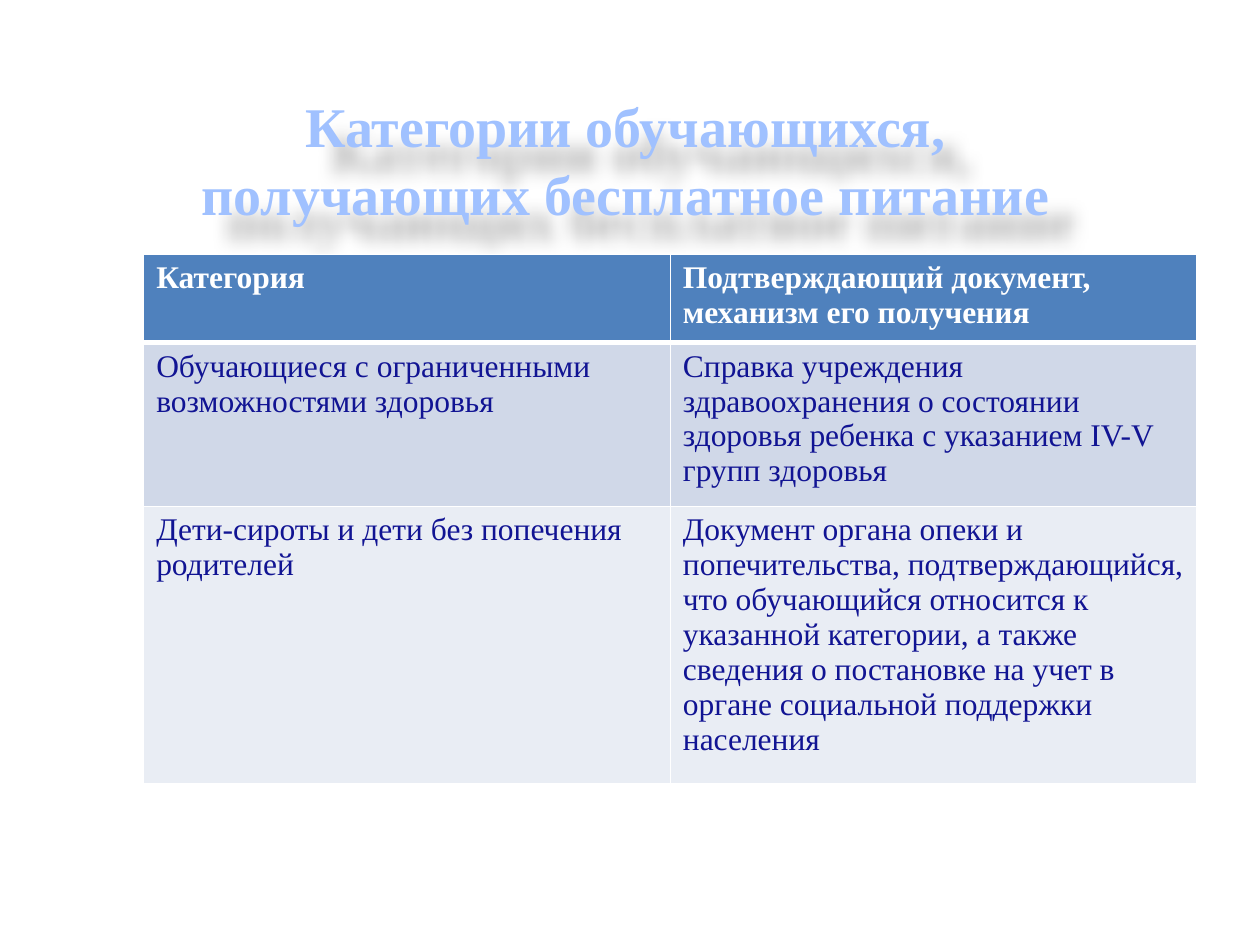
"""Build a slide with a table of pupils entitled to free meals."""
from lxml import etree
from pptx import Presentation
from pptx.dml.color import RGBColor
from pptx.enum.text import MSO_ANCHOR, MSO_AUTO_SIZE, PP_ALIGN
from pptx.oxml import parse_xml
from pptx.oxml.ns import nsdecls, qn
from pptx.util import Inches, Pt

CENTER = PP_ALIGN.CENTER
TOP = MSO_ANCHOR.TOP
NO_FIT = MSO_AUTO_SIZE.NONE
FONT = "Times New Roman"
COLORS = {
    "title": "A0C1FF", "shade": "000000", "head": "4F81BD", "white": "FFFFFF",
    "text": "111493", "band": "D0D8E8", "pale": "E9EDF4",
}


def add_run(para, text, size, color, bold):
    run = para.add_run()
    run.text = text
    run.font.name = FONT
    run.font.size = Pt(size)
    run.font.bold = bold
    run.font.color.rgb = RGBColor.from_string(COLORS[color])


def add_edge(cell, side, width):
    props = cell._tc.get_or_add_tcPr()
    edge = etree.SubElement(props, qn("a:" + side), w=str(Pt(width)))
    fill = etree.SubElement(edge, qn("a:solidFill"))
    etree.SubElement(fill, qn("a:srgbClr"), val=COLORS["white"])


prs = Presentation()
prs.slide_width, prs.slide_height = Inches(10), Inches(7.5)
slide = prs.slides.add_slide(prs.slide_layouts[5])

title = slide.shapes.title
title.left, title.top = Inches(1.46), Inches(0.68)
title.width, title.height = Inches(7.01), Inches(1.18)
frame = title.text_frame
frame.word_wrap = False
frame.auto_size = NO_FIT
frame.vertical_anchor = TOP
for i, line in enumerate(["Категории обучающихся,", "получающих бесплатное питание"]):
    para = frame.add_paragraph() if i else frame.paragraphs[0]
    para.alignment = CENTER
    add_run(para, line, 32, "title", True)
title._element.spPr.append(parse_xml(
    f'<a:effectLst {nsdecls("a")}>'
    f'<a:outerShdw blurRad="{Inches(0.14)}" dist="{Inches(0.27)}" dir="2700000" algn="tl">'
    f'<a:srgbClr val="{COLORS["shade"]}"><a:alpha val="30000"/></a:srgbClr>'
    '</a:outerShdw></a:effectLst>'))

rows = [
    (0.7, "head", "white", ["Категория", "Подтверждающий документ, механизм его получения"]),
    (1.3, "band", "text", [
        "Обучающиеся с ограниченными возможностями здоровья",
        "Справка учреждения здравоохранения о состоянии здоровья ребенка "
        "с указанием IV-V групп здоровья"]),
    (2.2, "pale", "text", [
        "Дети-сироты и дети без попечения родителей",
        "Документ органа опеки и попечительства, подтверждающийся, что обучающийся "
        "относится к указанной категории, а также сведения о постановке на учет "
        "в органе социальной поддержки населения"]),
]
table = slide.shapes.add_table(
    3, 2, Inches(1.14), Inches(2.02), Inches(8.36), Inches(4.2)).table
for col in table.columns:
    col.width = Inches(4.18)
for r, (height, fill, color, texts) in enumerate(rows):
    table.rows[r].height = Inches(height)
    for c, text in enumerate(texts):
        cell = table.cell(r, c)
        for side in ("lnL", "lnR", "lnT", "lnB"):
            thick = (r, side) in ((0, "lnB"), (1, "lnT"))
            add_edge(cell, side, 3 if thick else 1)
        cell.fill.solid()
        cell.fill.fore_color.rgb = RGBColor.from_string(COLORS[fill])
        add_run(cell.text_frame.paragraphs[0], text, 18, color, r == 0)

prs.save("out.pptx")
